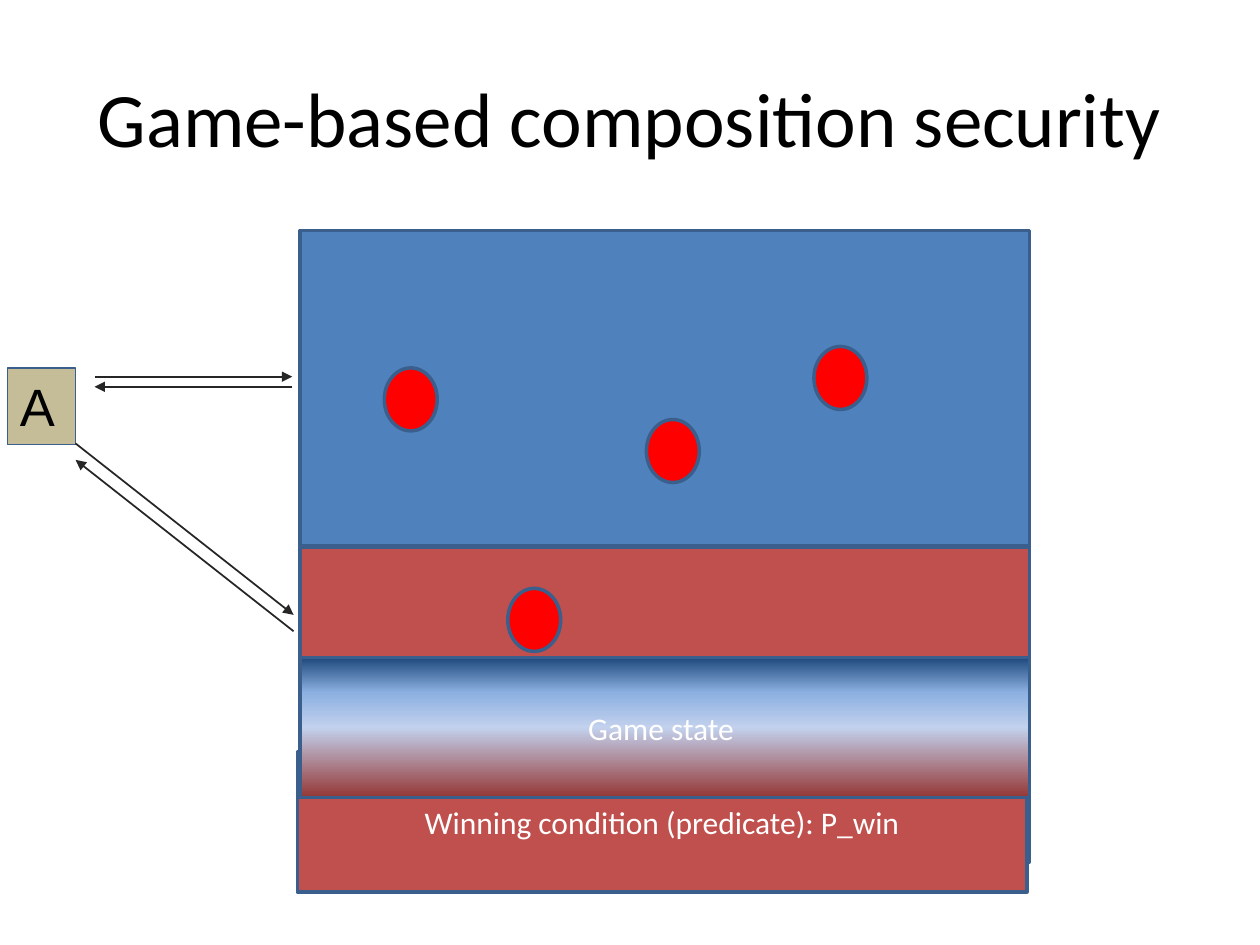
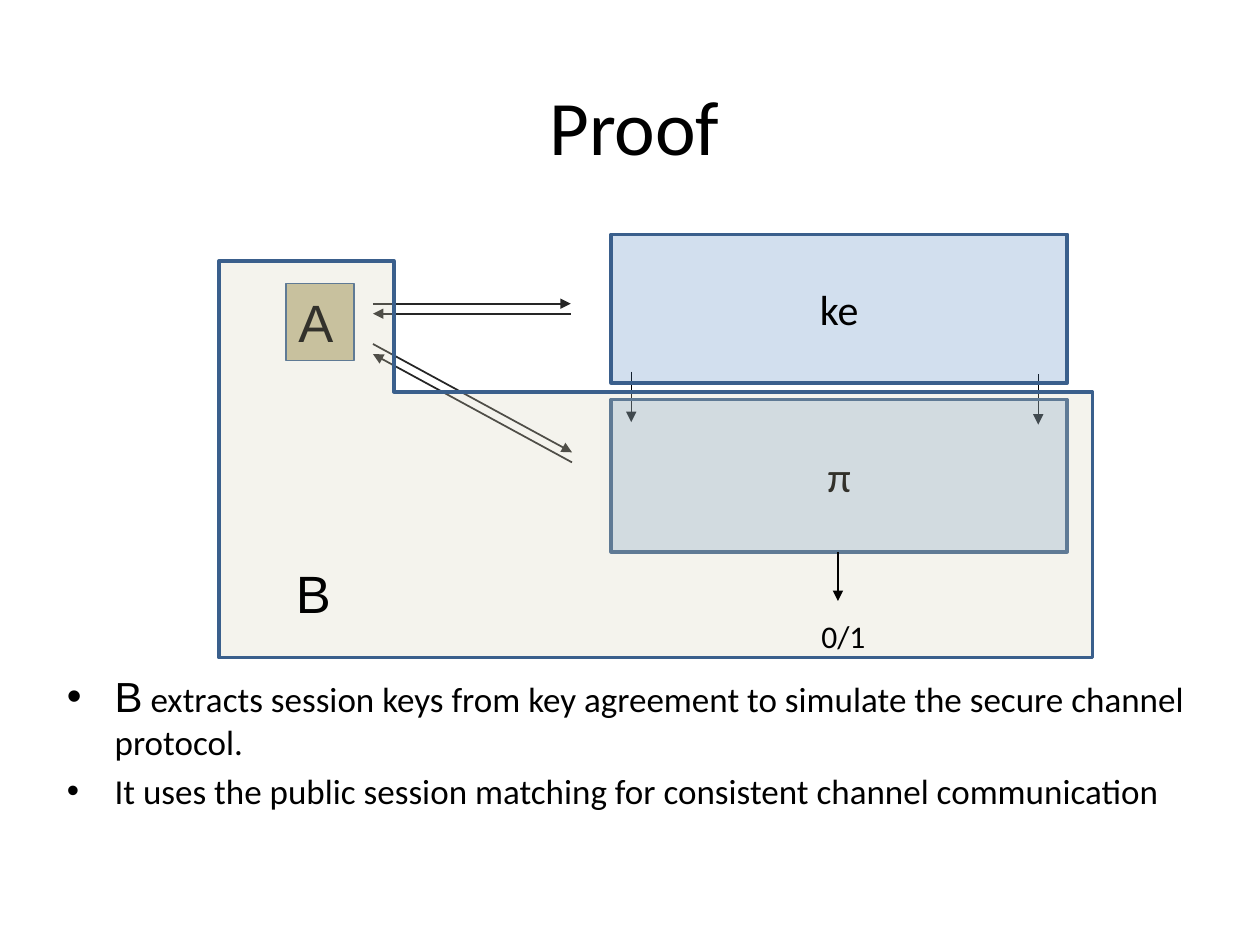
from copy import deepcopy

from lxml.etree import SubElement
from pptx import Presentation
from pptx.dml.color import RGBColor
from pptx.enum.shapes import MSO_CONNECTOR, MSO_SHAPE
from pptx.enum.text import MSO_ANCHOR, MSO_AUTO_SIZE, PP_ALIGN
from pptx.oxml.ns import qn
from pptx.util import Inches, Pt

# Shared colours and fonts
BLACK = RGBColor(0x00, 0x00, 0x00)
WHITE = RGBColor(0xFF, 0xFF, 0xFF)
CHARCOAL = RGBColor(0x26, 0x26, 0x26)
OUTLINE = RGBColor(0x3A, 0x5F, 0x8C)
BLUE = RGBColor(0x4F, 0x81, 0xBD)
BRICK = RGBColor(0xC0, 0x50, 0x4D)
RED = RGBColor(0xFF, 0x00, 0x00)
TAN = RGBColor(0xC4, 0xBD, 0x97)
SAND = RGBColor(0xD5, 0xD0, 0xB5)
STATE_GRADIENT = [
    (0, RGBColor(0x1F, 0x49, 0x7D)),
    (0.25, RGBColor(0x8C, 0xB0, 0xE1)),
    (0.5, RGBColor(0xC2, 0xD1, 0xED)),
    (1, RGBColor(0x95, 0x37, 0x35)),
]
BODY_FONT = "Calibri"
PARTY_FONT = "Arial"

TITLE_ONLY, TITLE_AND_CONTENT = 5, 1


def place(shape, left, top, width, height):
    shape.left, shape.top = Inches(left), Inches(top)
    shape.width, shape.height = Inches(width), Inches(height)


def add_run(paragraph, text, size, color=BLACK, font=BODY_FONT):
    run = paragraph.add_run()
    run.text = text
    run.font.size = Pt(size)
    run.font.name = font
    run.font.color.rgb = color


def set_title(slide, text, *box):
    place(slide.shapes.title, *box)
    frame = slide.shapes.title.text_frame
    frame.vertical_anchor = MSO_ANCHOR.MIDDLE
    frame.paragraphs[0].alignment = PP_ALIGN.CENTER
    add_run(frame.paragraphs[0], text, 44)


def add_block(slide, kind, box, fill, opacity=None, line_width=2):
    block = slide.shapes.add_shape(kind, *map(Inches, box))
    block.shadow.inherit = False
    block.line.color.rgb = OUTLINE
    block.line.width = Pt(line_width)
    block.fill.solid()
    block.fill.fore_color.rgb = fill
    if opacity is not None:
        color = block.fill._xPr.find(qn("a:solidFill"))[0]
        SubElement(color, qn("a:alpha")).set("val", str(opacity * 1000))
    return block


def add_label(block, text, size, color):
    frame = block.text_frame
    frame.vertical_anchor = MSO_ANCHOR.MIDDLE
    frame.paragraphs[0].alignment = PP_ALIGN.CENTER
    add_run(frame.paragraphs[0], text, size, color)


def fill_gradient(block, stops):
    block.fill.gradient()
    block.fill.gradient_angle = 270
    stop_list = block.fill._xPr.find(qn("a:gradFill")).find(qn("a:gsLst"))
    while len(stop_list) < len(stops):
        stop_list.append(deepcopy(stop_list[0]))
    for stop, (position, color) in zip(block.fill.gradient_stops, stops):
        stop.position = position
        stop.color.rgb = color


def write_unwrapped(shape, text, size, font):
    frame = shape.text_frame
    frame.word_wrap = False
    frame.auto_size = MSO_AUTO_SIZE.SHAPE_TO_FIT_TEXT
    frame.vertical_anchor = MSO_ANCHOR.TOP
    frame.paragraphs[0].alignment = PP_ALIGN.LEFT
    add_run(frame.paragraphs[0], text, size, font=font)


def add_caption(slide, box, text, size, font=BODY_FONT):
    write_unwrapped(slide.shapes.add_textbox(*map(Inches, box)), text, size, font)


def add_adversary(slide, left, top):
    adversary = add_block(slide, MSO_SHAPE.RECTANGLE, (left, top, 0.54, 0.61), TAN,
                          line_width=0.75)
    write_unwrapped(adversary, "A", 30, PARTY_FONT)


def add_arrow(slide, start, end, color=BLACK, width=0.75):
    arrow = slide.shapes.add_connector(MSO_CONNECTOR.STRAIGHT, *map(Inches, start + end))
    arrow.line.color.rgb = color
    arrow.line.width = Pt(width)
    SubElement(arrow.line._get_or_add_ln(), qn("a:tailEnd")).set("type", "triangle")
    SubElement(arrow._element.spPr, qn("a:effectLst"))


def add_exchange(slide, start, end, gap=0.08):
    """A query arrow with its answer running back just below it."""
    add_arrow(slide, start, end, CHARCOAL, 1)
    add_arrow(slide, (end[0], end[1] + gap), (start[0], start[1] + gap), CHARCOAL, 1)


def add_bullets(slide, box, bullets):
    body = slide.placeholders[1]
    place(body, *box)
    frame = body.text_frame
    frame.auto_size = MSO_AUTO_SIZE.NONE
    for index, runs in enumerate(bullets):
        paragraph = frame.add_paragraph() if index else frame.paragraphs[0]
        properties = paragraph._p.get_or_add_pPr()
        properties.set("marL", str(Inches(0.38)))
        properties.set("indent", str(Inches(-0.38)))
        for text, size, font in runs:
            add_run(paragraph, text, size, font=font)


def build_game_slide(deck):
    slide = deck.slides.add_slide(deck.slide_layouts[TITLE_ONLY])
    set_title(slide, "Game-based composition security", 0.5, 0.3, 9, 1.25)

    # Composed protocol layers and their sessions
    left, width = 2.38, 5.79
    add_block(slide, MSO_SHAPE.RECTANGLE, (left, 4.34, width, 2.5), BRICK)
    add_block(slide, MSO_SHAPE.RECTANGLE, (left, 1.83, width, 2.5), BLUE)
    for session in [(3.05, 2.92), (4.03, 4.67), (5.13, 3.33), (6.46, 2.75)]:
        add_block(slide, MSO_SHAPE.OVAL, session + (0.42, 0.5), RED)

    # Winning condition and game state
    winning = add_block(slide, MSO_SHAPE.RECTANGLE, (2.36, 5.97, width, 1.11), BRICK)
    add_label(winning, "Winning condition (predicate): P_win", 18, WHITE)
    state = add_block(slide, MSO_SHAPE.RECTANGLE, (left, 5.22, width, 1.11), BLUE)
    fill_gradient(state, STATE_GRADIENT)
    add_label(state, "Game state ", 18, WHITE)

    # Adversary and its queries
    add_adversary(slide, 0.06, 2.92)
    add_exchange(slide, (0.75, 2.99), (2.32, 2.99))
    add_exchange(slide, (0.6, 3.52), (2.33, 4.88), gap=0.13)


def build_proof_slide(deck):
    slide = deck.slides.add_slide(deck.slide_layouts[TITLE_AND_CONTENT])
    set_title(slide, "Proof", 0.35, 0.53, 9.37, 0.92)
    add_bullets(slide, (0.43, 5.27, 9.45, 1.39), [
        [("B", 24, PARTY_FONT),
         (" extracts session keys from key agreement to simulate the secure "
          "channel protocol.", 20, BODY_FONT)],
        [("It uses the public session matching for consistent channel "
          "communication", 20, BODY_FONT)],
    ])

    # Session keys passed from key agreement to the channel protocol
    for x, y in [(8.24, 2.97), (5.01, 2.95)]:
        add_arrow(slide, (x, y), (x, y + 0.4))
    for protocol, top, height in [("ke", 1.86, 1.18), ("π", 3.17, 1.21)]:
        block = add_block(slide, MSO_SHAPE.RECTANGLE, (4.85, top, 3.62, height), BLUE,
                          opacity=25)
        add_label(block, protocol, 24, BLACK)

    # Adversary and its queries
    add_adversary(slide, 2.27, 2.25)
    add_exchange(slide, (2.96, 2.41), (4.53, 2.41))
    add_exchange(slide, (2.96, 2.73), (4.54, 3.59))

    # Reduction B enclosing the adversary and the channel protocol
    reduction = add_block(slide, MSO_SHAPE.CORNER, (1.74, 2.07, 6.93, 3.15), SAND,
                          opacity=24)
    reduction.adjustments[0] = 0.67
    reduction.adjustments[1] = 0.44
    add_caption(slide, (2.25, 4.4, 0.48, 0.61), "B", 30, PARTY_FONT)

    # Output bit
    add_arrow(slide, (6.65, 4.38), (6.65, 4.77))
    add_caption(slide, (6.42, 4.85, 0.55, 0.4), "0/1", 18)


def main():
    deck = Presentation()
    deck.slide_width, deck.slide_height = Inches(10), Inches(7.5)
    build_game_slide(deck)
    build_proof_slide(deck)
    deck.save("out.pptx")


if __name__ == "__main__":
    main()
